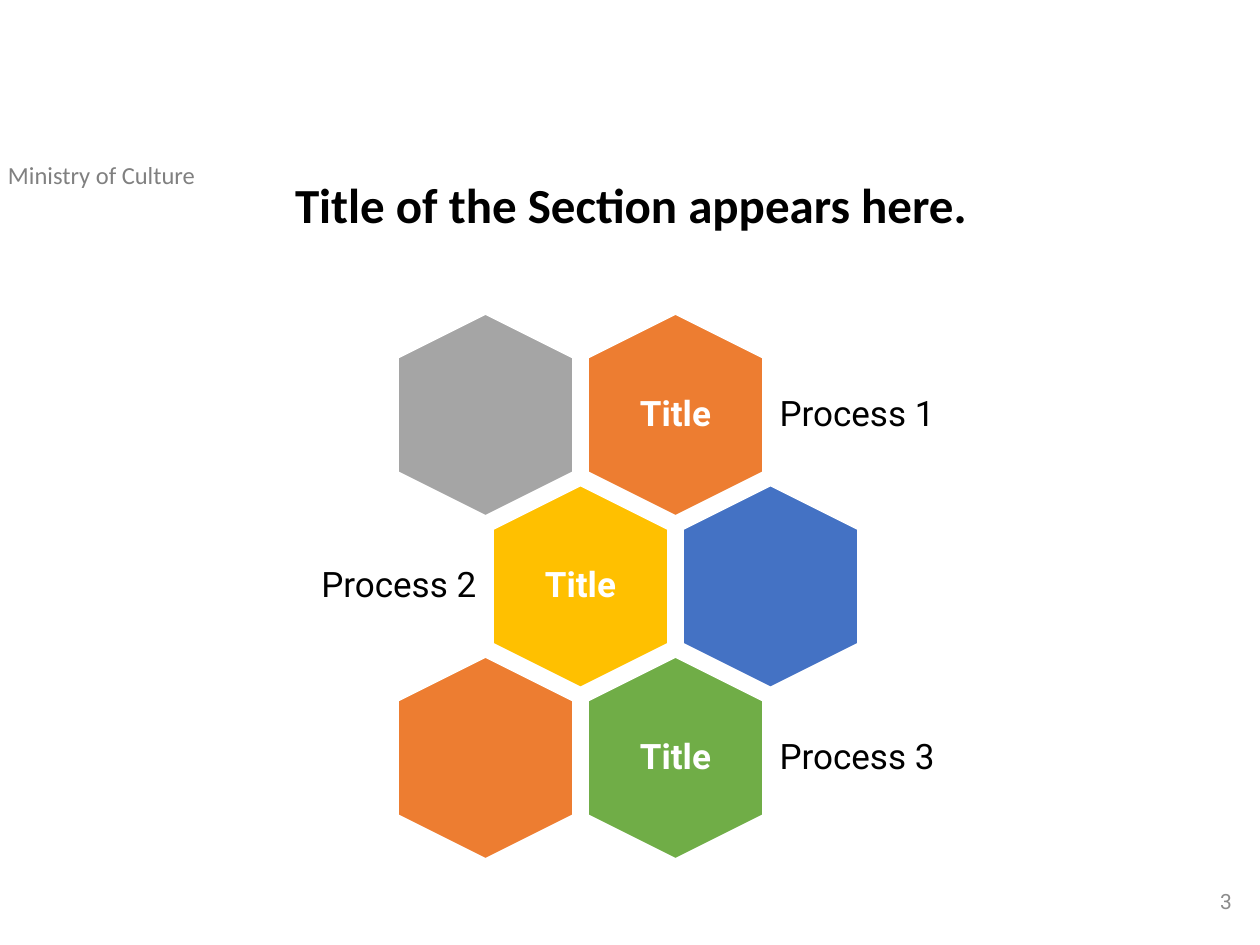
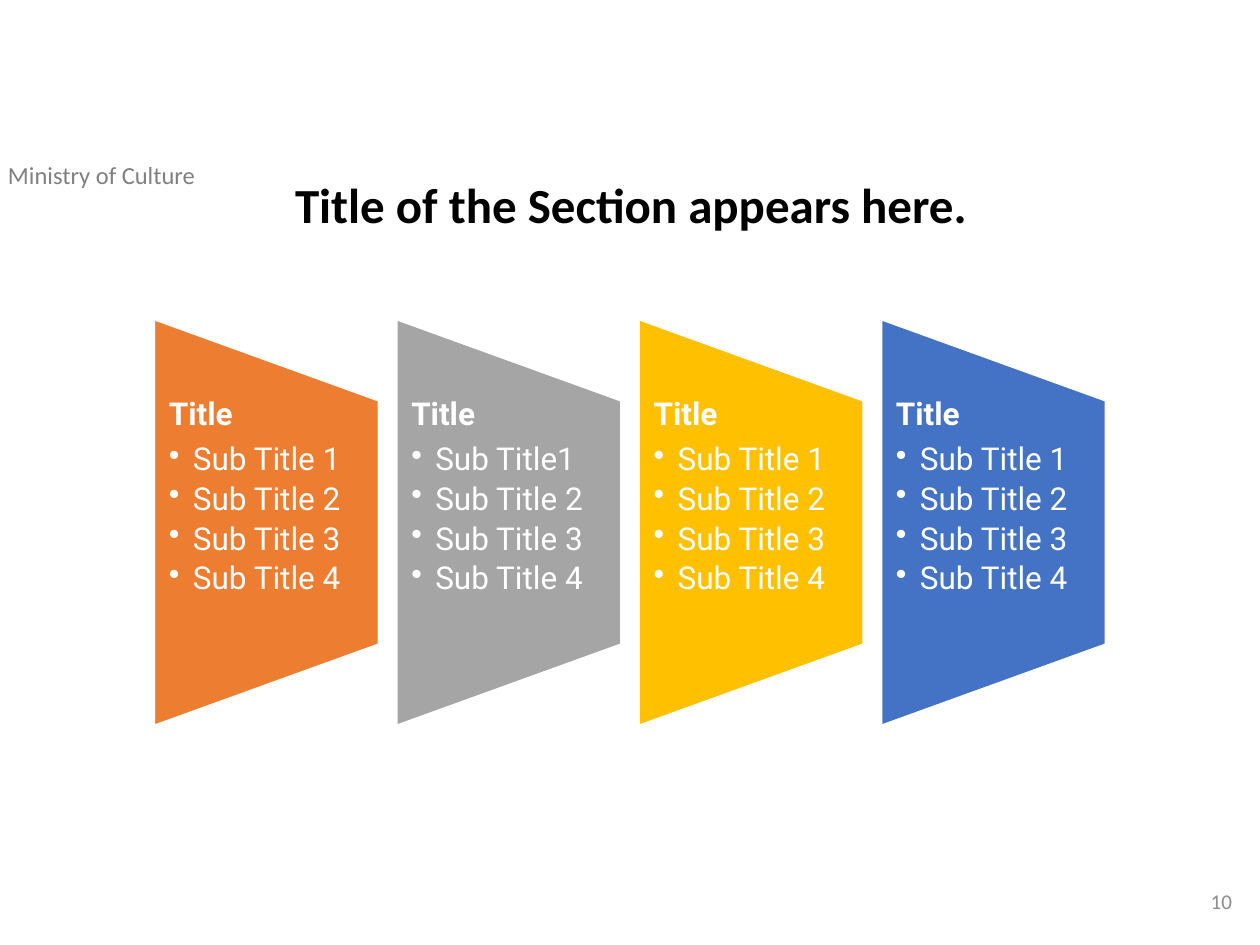
import dataclasses
import pptx
import pptx.util
import pptx.dml.color
import pptx.enum.shapes
import pptx.enum.text
import pptx.oxml
import pptx.oxml.ns

SHAPE = pptx.enum.shapes.MSO_SHAPE
ALIGN = pptx.enum.text.PP_ALIGN
ANCHOR = pptx.enum.text.MSO_ANCHOR
SCALE = 914400 / 126


@dataclasses.dataclass(frozen=True)
class Theme:
    orange: str = "ED7D31"
    grey: str = "A5A5A5"
    gold: str = "FFC000"
    blue: str = "4472C4"
    green: str = "70AD47"
    white: str = "FFFFFF"
    black: str = "000000"
    brand: str = "808080"
    number: str = "8C8C8C"
    head: str = "Calibri"
    body: str = "Roboto"
    title: int = 28
    label: int = 20
    item: int = 18
    header: int = 14
    footer: int = 12


THEME = Theme()


def px(count):
    return pptx.util.Emu(round(count * SCALE))


def rgb(code):
    return pptx.dml.color.RGBColor.from_string(code)


def write(para, text, size, color, font, bold=False, align=ALIGN.LEFT, lead=0.9):
    para.alignment = align
    para.line_spacing = lead
    run = para.add_run()
    run.text = text
    run.font.size = pptx.util.Pt(size)
    run.font.name = font
    run.font.bold = bold
    run.font.color.rgb = rgb(color)


def setup(frame, anchor=ANCHOR.TOP, side=13, edge=6):
    frame.word_wrap = True
    frame.auto_size = pptx.enum.text.MSO_AUTO_SIZE.NONE
    frame.vertical_anchor = anchor
    frame.margin_left = frame.margin_right = px(side)
    frame.margin_top = frame.margin_bottom = px(edge)
    return frame


def textbox(slide, box, **style):
    return setup(slide.shapes.add_textbox(*map(px, box)).text_frame, **style)


def turned(slide, kind, center, size, angle, color, width):
    (x, y), (w, h) = center, size
    shape = slide.shapes.add_shape(kind, px(x - w / 2), px(y - h / 2), px(w), px(h))
    shape.rotation = angle
    shape.shadow.inherit = False
    shape.fill.solid()
    shape.fill.fore_color.rgb = rgb(color)
    shape.line.color.rgb = rgb(THEME.white)
    shape.line.width = pptx.util.Pt(width)
    return shape


def page(deck, number, font):
    slide = deck.slides.add_slide(deck.slide_layouts[5])
    title = slide.shapes.title
    title.left, title.top, title.width, title.height = map(px, (282, 175, 814, 100))
    write(setup(title.text_frame).paragraphs[0], "Title of the Section appears here.",
          THEME.title, THEME.black, THEME.head, bold=True)
    header = textbox(slide, (-5, 154, 365, 43))
    write(header.paragraphs[0], "Ministry of Culture",
          THEME.header, THEME.brand, THEME.head, lead=1.0)
    footer = textbox(slide, (961, 876, 284, 50), anchor=ANCHOR.MIDDLE)
    write(footer.paragraphs[0], number, THEME.footer, THEME.number, font,
          align=ALIGN.RIGHT, lead=1.0)
    return slide


def caption(slide, box, text, color, align, bold=False):
    frame = textbox(slide, box, anchor=ANCHOR.MIDDLE, side=10, edge=10)
    write(frame.paragraphs[0], text, THEME.label, color, THEME.body, bold, align)


def comb(slide, box, rows):
    left, top, wide, tall = box
    cell, step, rise = 175, 190, (tall - 202) / (len(rows) - 1)
    for row, (colors, named, text) in enumerate(rows):
        y = top + 101 + row * rise
        for col, color in enumerate(colors):
            x = left + cell / 2 + col * step + row % 2 * step / 2
            shape = turned(slide, SHAPE.HEXAGON, (x, y), (202, cell), 90, color, 1)
            shape.adjustments[0] = 0.25
            if col != named:
                continue
            caption(slide, (x - 60, y - 70, 120, 140), "Title",
                    THEME.white, ALIGN.CENTER, bold=True)
            start, align = (x + 94, ALIGN.LEFT) if col else (x - 314, ALIGN.RIGHT)
            caption(slide, (start, y - 60, 220, 120), text, THEME.black, align)


def bullet(para):
    props = para._p.get_or_add_pPr()
    props.set("marL", str(px(24)))
    props.set("indent", str(px(-24)))
    mark = pptx.oxml.parse_xml(
        f'<a:buChar {pptx.oxml.ns.nsdecls("a")} char="•"/>')
    props.append(mark)


def card(slide, box, color, items):
    left, top, wide, tall = box
    center = (left + wide / 2, top + tall / 2)
    turned(slide, SHAPE.FLOWCHART_MANUAL_OPERATION, center, (tall, wide), 270, color, 1.5)
    frame = textbox(slide, (left, top + 79, wide, 244), side=15, edge=0)
    head = frame.paragraphs[0]
    write(head, "Title", THEME.item, THEME.white, THEME.body, bold=True)
    head.space_after = pptx.util.Pt(6.7)
    for item in items:
        para = frame.add_paragraph()
        bullet(para)
        write(para, item, THEME.item, THEME.white, THEME.body)
        para.space_after = pptx.util.Pt(3.2)


def cards(slide, box, colors, lists):
    left, top, wide, tall = box
    width = 225
    step = (wide - width) / (len(colors) - 1)
    for index, (color, items) in enumerate(zip(colors, lists)):
        card(slide, (left + index * step, top, width, tall), color, items)


def main():
    deck = pptx.Presentation()
    deck.slide_width, deck.slide_height = px(1260), px(945)
    comb(page(deck, "3", THEME.body), (398, 314, 460, 545), [
        ((THEME.grey, THEME.orange), 1, "Process 1"),
        ((THEME.gold, THEME.blue), 0, "Process 2"),
        ((THEME.orange, THEME.green), 1, "Process 3"),
    ])
    rest = [f"Sub Title {count}" for count in range(2, 5)]
    firsts = ("Sub Title 1", "Sub Title1", "Sub Title 1", "Sub Title 1")
    cards(page(deck, "10", THEME.head), (154, 319, 952, 407),
          (THEME.orange, THEME.grey, THEME.gold, THEME.blue),
          [[first, *rest] for first in firsts])
    deck.save("out.pptx")


if __name__ == "__main__":
    main()
